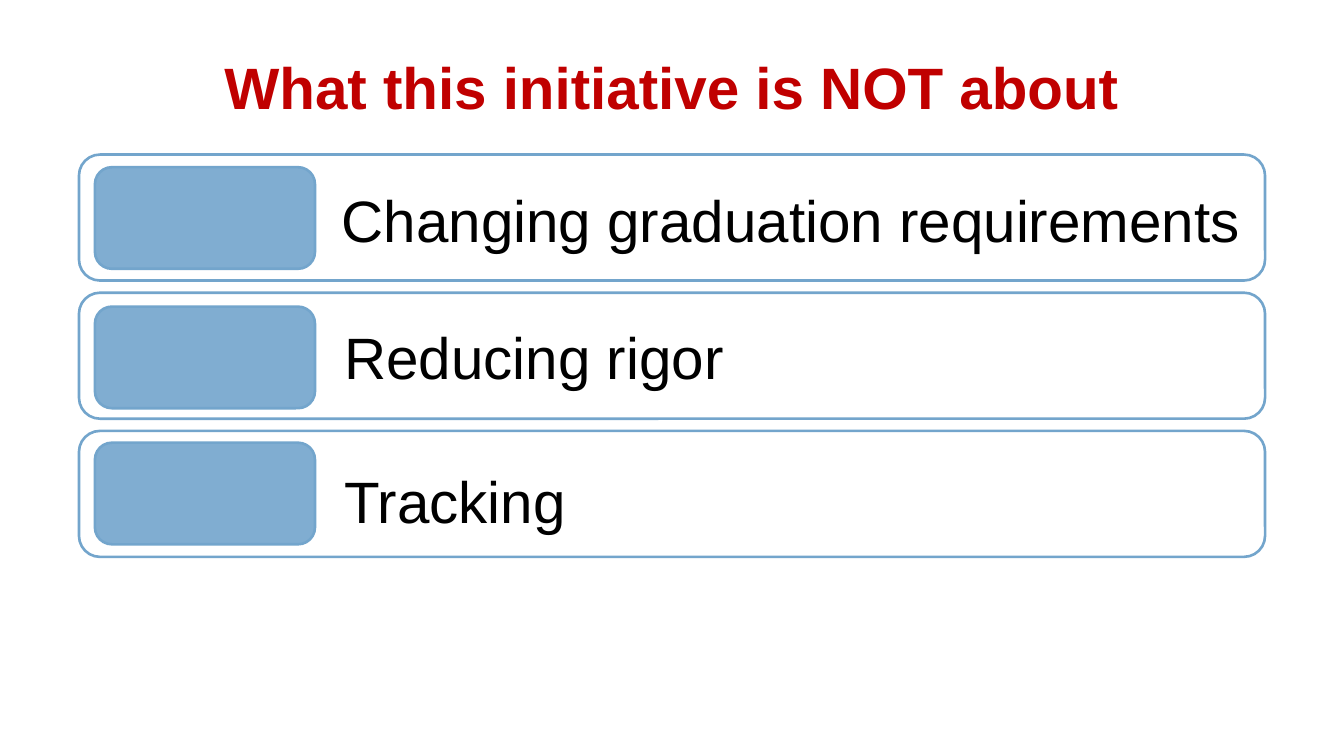
from pptx import Presentation
from pptx.dml.color import RGBColor
from pptx.enum.shapes import MSO_SHAPE
from pptx.enum.text import MSO_ANCHOR, PP_ALIGN
from pptx.oxml.ns import qn
from pptx.util import Inches, Pt
from lxml import etree

RED = RGBColor(0xC0, 0x00, 0x00)
BLUE = RGBColor(0x73, 0xA5, 0xCC)
BLACK = RGBColor(0x00, 0x00, 0x00)

TOP, STEP = 1.84, 1.645

# Label, its left, top and width, and the top of its block
ROWS = [
    ("Changing graduation requirements", 3.97, 2.14, 11.27, 1.99),
    ("Reducing rigor", 4, 3.78, 8, 3.65),
    ("Tracking", 4, 5.49, 8, 5.27),
]


def add_run(para, text, color, bold=False):
    run = para.add_run()
    run.text = text
    font = run.font
    font.name, font.size, font.bold = "Arial", Pt(50), bold
    font.color.rgb = color


def add_title(slide, text):
    title = slide.shapes.title
    title.left, title.top = Inches(0.8), Inches(0.6)
    title.width, title.height = Inches(14.4), Inches(0.84)
    frame = title.text_frame
    frame.margin_left = frame.margin_right = 0
    frame.margin_top = frame.margin_bottom = 0
    frame.vertical_anchor = MSO_ANCHOR.MIDDLE
    para = frame.paragraphs[0]
    para.alignment = PP_ALIGN.CENTER
    add_run(para, text, RED, True)


def add_box(slide, left, top, width, height, solid=False):
    box = slide.shapes.add_shape(
        MSO_SHAPE.ROUNDED_RECTANGLE,
        Inches(left), Inches(top), Inches(width), Inches(height))
    box.shadow.inherit = False
    box.line.color.rgb = BLUE
    box.line.width = Pt(2.25)
    if solid:
        box.fill.solid()
        box.fill.fore_color.rgb = BLUE
        # Slight transparency
        color = box.fill._xPr.find(qn("a:solidFill"))[0]
        etree.SubElement(color, qn("a:alpha")).set("val", "90000")
    else:
        box.fill.background()


def add_label(slide, text, left, top, width):
    label = slide.shapes.add_textbox(
        Inches(left), Inches(top), Inches(width), Inches(0.94))
    label.text_frame.word_wrap = True
    add_run(label.text_frame.paragraphs[0], text, BLACK)


def main():
    deck = Presentation()
    deck.slide_width, deck.slide_height = Inches(16), Inches(9)
    slide = deck.slides.add_slide(deck.slide_layouts[5])
    add_title(slide, "What this initiative is NOT about")

    # Framed rows, each with a block and a label
    for i, (text, left, top, width, block) in enumerate(ROWS):
        add_box(slide, 0.94, TOP + i * STEP, 14.12, 1.5)
        add_box(slide, 1.13, block, 2.62, 1.21, solid=True)
        add_label(slide, text, left, top, width)

    deck.save("out.pptx")


if __name__ == "__main__":
    main()
